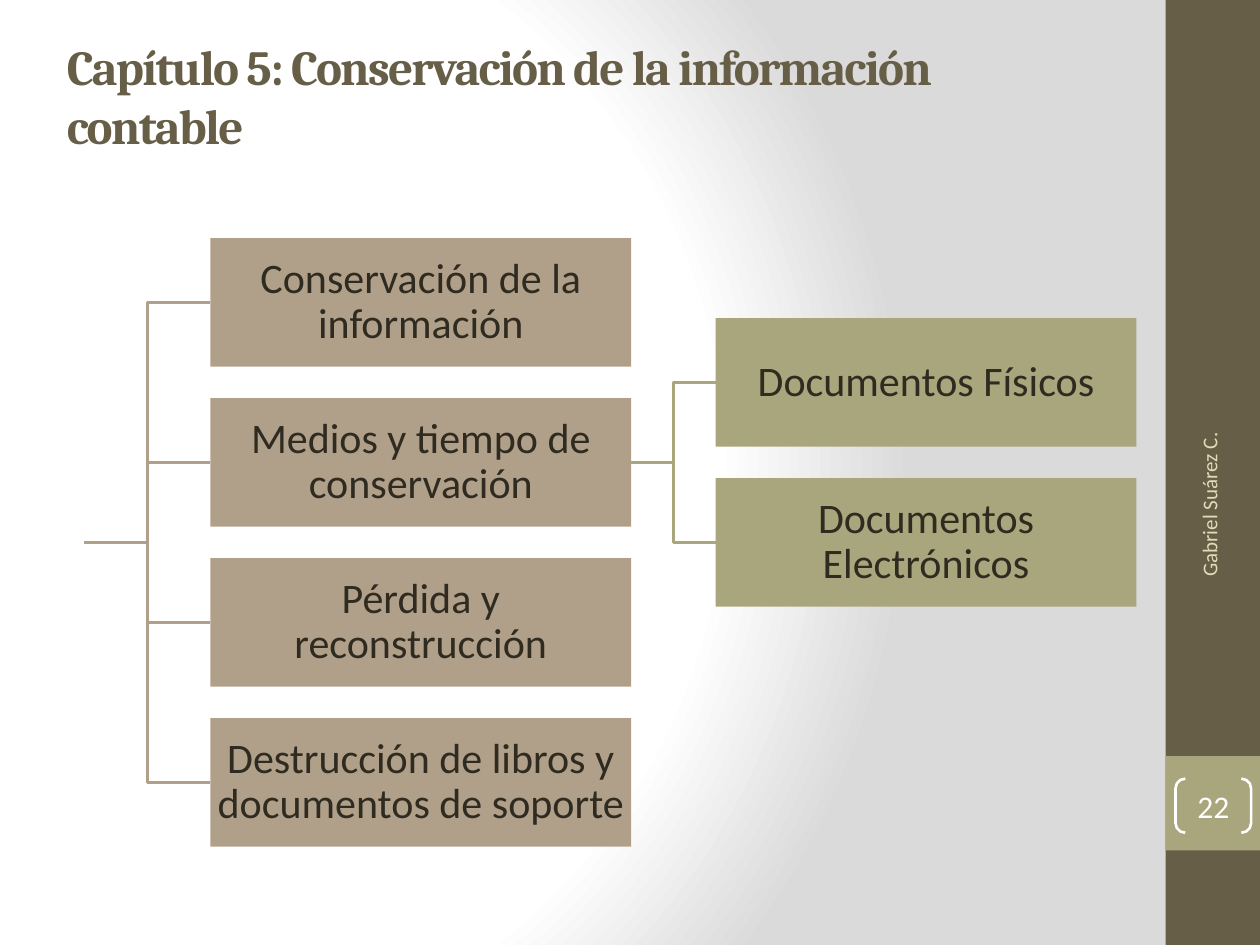
from lxml import etree
from pptx import Presentation
from pptx import util as u
from pptx.dml.color import RGBColor
from pptx.enum import shapes, text
from pptx.oxml import ns

COLORS = {
    "brown": "675E47", "olive": "A9A57C", "tan": "B1A089", "ink": "2F2B20",
    "cream": "DFDCB7", "white": "FFFFFF", "gray": "DADADA",
}
# Diagram grid in inches
BOX_WIDTH, BOX_HEIGHT, ROW_PITCH = 3.34, 1.02, 1.27
TOPICS_LEFT, MEDIA_LEFT, FIRST_TOP = 1.67, 5.68, 1.89
ROOT_LEFT = 0.67
TOPICS = [
    "Conservación de la información",
    "Medios y tiempo de conservación",
    "Pérdida y reconstrucción",
    "Destrucción de libros y documentos de soporte",
]
MEDIA = ["Documentos Físicos", "Documentos Electrónicos"]
MEDIA_PARENT = 1


def color(name):
    return RGBColor.from_string(COLORS[name])


def row_top(row):
    return FIRST_TOP + row * ROW_PITCH


def row_middle(row):
    return row_top(row) + BOX_HEIGHT / 2


def write(shape, words, size, ink, align, font="Calibri", inset=None):
    frame = shape.text_frame
    frame.word_wrap = True
    frame.auto_size = text.MSO_AUTO_SIZE.NONE
    frame.vertical_anchor = text.MSO_ANCHOR.MIDDLE
    if inset is not None:
        frame.margin_left = frame.margin_right = u.Inches(inset)
        frame.margin_top = frame.margin_bottom = u.Inches(inset)
    paragraph = frame.paragraphs[0]
    paragraph.alignment = align
    run = paragraph.add_run()
    run.text = words
    run.font.size = u.Pt(size)
    run.font.name = font
    run.font.color.rgb = color(ink)
    return paragraph, run


def add_block(slide, left, top, width, height, fill):
    shape = slide.shapes.add_shape(
        shapes.MSO_SHAPE.RECTANGLE, *map(u.Inches, (left, top, width, height)))
    shape.shadow.inherit = False
    shape.fill.solid()
    shape.fill.fore_color.rgb = color(fill)
    shape.line.fill.background()
    return shape


def add_topic(slide, left, row, words, fill):
    shape = add_block(slide, left, row_top(row), BOX_WIDTH, BOX_HEIGHT, fill)
    paragraph, _ = write(shape, words, 24, "ink", text.PP_ALIGN.CENTER, inset=0.02)
    paragraph.line_spacing = 0.9


def add_branch(slide, start, end, line):
    """Draw an elbow line that turns halfway between its two ends."""
    (left, top), (right, bottom) = start, end
    middle = (left + right) / 2
    points = [(middle, top), (middle, bottom), (right, bottom)]
    builder = slide.shapes.build_freeform(u.Inches(left), u.Inches(top))
    builder.add_line_segments(
        [(u.Inches(x), u.Inches(y)) for x, y in points], close=False)
    shape = builder.convert_to_shape()
    shape.shadow.inherit = False
    shape.fill.background()
    shape.line.color.rgb = color(line)
    shape.line.width = u.Pt(2)


def set_background(slide):
    fill = slide.background.fill
    fill.gradient()
    gradient = slide.background._cSld.find(".//" + ns.qn("a:gradFill"))
    for child in list(gradient):
        gradient.remove(child)
    stops = etree.SubElement(gradient, ns.qn("a:gsLst"))
    for share, name in [(0, "white"), (75, "white"), (100, "gray")]:
        stop = etree.SubElement(stops, ns.qn("a:gs"), pos=str(share * 1000))
        etree.SubElement(stop, ns.qn("a:srgbClr"), val=COLORS[name])
    path = etree.SubElement(gradient, ns.qn("a:path"), path="circle")
    etree.SubElement(path, ns.qn("a:fillToRect"),
                     l="20000", t="50000", r="100000", b="50000")


def add_title(slide):
    title = slide.shapes.title
    title.left, title.top, title.width, title.height = map(
        u.Inches, (0.43, 0.13, 8.33, 1.25))
    _, run = write(title, "Capítulo 5: Conservación de la información contable",
                   28, "brown", text.PP_ALIGN.LEFT, "Cambria")
    run.font.bold = True
    run._r.get_or_add_rPr().set("spc", "-100")


def add_sidebar(slide):
    add_block(slide, 9.25, 0, 0.75, 7.5, "brown")
    add_block(slide, 9.25, 6, 0.75, 0.75, "olive")
    # Author, read upwards
    author = slide.shapes.add_textbox(*map(u.Inches, (8.3, 4.43, 2.59, 0.4)))
    author.rotation = 270
    write(author, "Gabriel Suárez C.", 12, "cream", text.PP_ALIGN.RIGHT)
    # Page number in brackets
    number = slide.shapes.add_shape(
        shapes.MSO_SHAPE.DOUBLE_BRACKET, *map(u.Inches, (9.33, 6.18, 0.6, 0.43)))
    number.adjustments[0] = 0.18
    number.shadow.inherit = False
    number.fill.background()
    number.line.color.rgb = color("white")
    number.line.width = u.Pt(1.5)
    write(number, "22", 18, "white", text.PP_ALIGN.CENTER, inset=0)


def add_diagram(slide):
    root = (ROOT_LEFT, row_middle((len(TOPICS) - 1) / 2))
    parent = (TOPICS_LEFT + BOX_WIDTH, row_middle(MEDIA_PARENT))
    levels = [
        (TOPICS, TOPICS_LEFT, 0, root, "tan"),
        (MEDIA, MEDIA_LEFT, MEDIA_PARENT - 0.5, parent, "olive"),
    ]
    for items, left, first_row, origin, tint in levels:
        for index, words in enumerate(items):
            row = first_row + index
            add_branch(slide, origin, (left, row_middle(row)), tint)
            add_topic(slide, left, row, words, tint)


def main():
    presentation = Presentation()
    presentation.slide_width = u.Inches(10)
    presentation.slide_height = u.Inches(7.5)
    slide = presentation.slides.add_slide(presentation.slide_layouts[5])
    set_background(slide)
    add_title(slide)
    add_sidebar(slide)
    add_diagram(slide)
    presentation.save("out.pptx")


if __name__ == "__main__":
    main()
